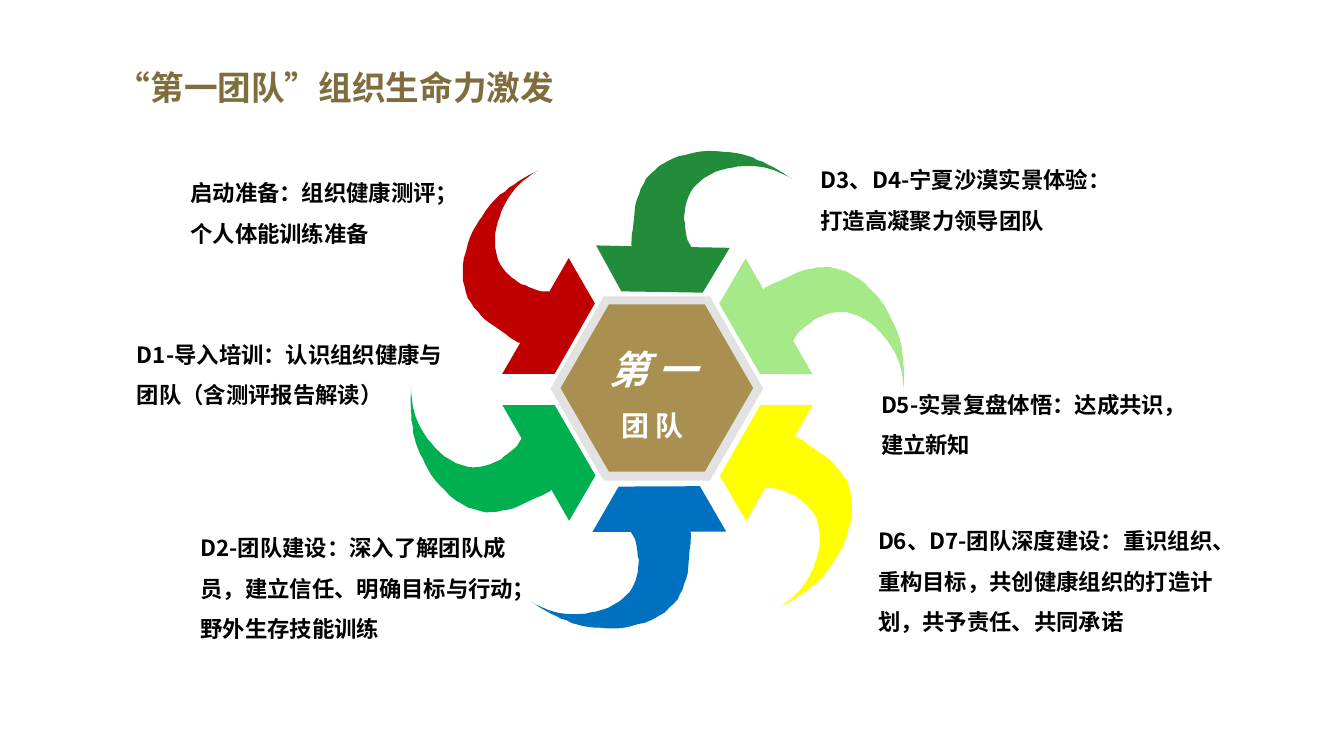
from dataclasses import dataclass

from lxml.etree import SubElement
from pptx import Presentation
from pptx.dml.color import RGBColor
from pptx.enum.shapes import MSO_SHAPE
from pptx.enum.text import MSO_ANCHOR, MSO_AUTO_SIZE, PP_ALIGN
from pptx.oxml.ns import qn
from pptx.util import Pt

PX = 9144  # EMU per px, 100 px to the inch
FONT = "Noto Sans CJK SC"
TITLE_ONLY = 5

BLACK = RGBColor(0x00, 0x00, 0x00)
WHITE = RGBColor(0xFF, 0xFF, 0xFF)
OCHRE = RGBColor(0x80, 0x6D, 0x3E)
GOLD = RGBColor(0xA9, 0x90, 0x51)
GREY = RGBColor(0xBF, 0xBF, 0xBF)
YELLOW = RGBColor(0xFF, 0xFF, 0x00)
LIME = RGBColor(0xA6, 0xE9, 0x89)
RED = RGBColor(0xC0, 0x00, 0x00)
GREEN = RGBColor(0x00, 0xB0, 0x50)
BLUE = RGBColor(0x00, 0x70, 0xC0)
FOREST = RGBColor(0x23, 0x8C, 0x3B)

# The head, the inner curve to the tip of the tail, then the outer curve back.
ARROW_OUTLINE = [
    (92, 0), (40, 0), (0, 70), (26, 115), (45, 82), (49, 82), (53, 82),
    (57, 83), (65, 86), (69, 88), (73, 89), (76, 91), (80, 94), (83, 96),
    (86, 99), (89, 102), (92, 106), (94, 109), (96, 113), (97, 117),
    (98, 121), (99, 126), (99, 130), (99, 134), (99, 139), (98, 144),
    (97, 148), (96, 152), (94, 157), (93, 161), (89, 169), (85, 176),
    (82, 180), (79, 184), (75, 188), (72, 191), (68, 194), (64, 197),
    (60, 200), (56, 202),
    (66, 197), (71, 194), (76, 191), (80, 188), (85, 185), (89, 181),
    (94, 178), (98, 174), (102, 170), (106, 165), (109, 161), (112, 156),
    (115, 152), (118, 147), (121, 142), (124, 135), (126, 129), (128, 121),
    (130, 115), (131, 107), (131, 100), (131, 93), (129, 86), (128, 81),
    (126, 75), (123, 71), (120, 66), (116, 62), (113, 58), (109, 54),
    (105, 51), (99, 47), (89, 40), (84, 36), (79, 33), (76, 31), (74, 31),
]


@dataclass
class Arrow:
    x: int
    y: int
    rotation: float
    color: RGBColor


@dataclass
class Label:
    x: int
    y: int
    w: int
    h: int
    text: str


@dataclass
class Hexagon:
    x: int
    y: int
    w: int
    h: int
    color: RGBColor
    opacity: int


ARROWS = [
    Arrow(714, 402, 0, YELLOW),
    Arrow(748, 229, 300.2, LIME),
    Arrow(459, 169, 180, RED),
    Arrow(425, 342, 120.2, GREEN),
    Arrow(554, 454, 60, BLUE),
    Arrow(627, 117, 241.2, FOREST),
]
HEXAGONS = [
    Hexagon(546, 294, 211, 183, GREY, 45),
    Hexagon(556, 302, 191, 166, GOLD, 100),
]
LABELS = [
    Label(179, 160, 304, 86, "启动准备：组织健康测评；\n个人体能训练准备"),
    Label(126, 320, 342, 98, "D1-导入培训：认识组织健康与团队（含测评报告解读）"),
    Label(189, 512, 342, 141,
          "D2-团队建设：深入了解团队成员，建立信任、明确目标与行动；野外生存技能训练"),
    Label(804, 147, 361, 86, "D3、D4-宁夏沙漠实景体验：\n打造高凝聚力领导团队"),
    Label(864, 370, 323, 98, "D5-实景复盘体悟：达成共识，建立新知"),
    Label(861, 505, 371, 117,
          "D6、D7-团队深度建设：重识组织、重构目标，共创健康组织的打造计划，共予责任、共同承诺"),
]


def format_runs(p, size: int, color: RGBColor, italic: bool = False) -> None:
    for r in p.runs:
        r.font.size = Pt(size)
        r.font.bold = True
        r.font.italic = italic
        r.font.color.rgb = color
        r.font.name = FONT
        SubElement(r.font._element, qn("a:ea"), typeface=FONT)


def paint(s, color: RGBColor, opacity: int = 100) -> None:
    """Give a shape a plain fill without line or shadow."""
    s.shadow.inherit = False
    s.line.fill.background()
    s.fill.solid()
    s.fill.fore_color.rgb = color
    if opacity < 100:
        tint = s._element.spPr.find(qn("a:solidFill"))[0]
        SubElement(tint, qn("a:alpha"), val=str(opacity * 1000))


def set_title(slide, text: str) -> None:
    s = slide.shapes.title
    s.left, s.top, s.width, s.height = (v * PX for v in (106, 61, 458, 50))
    tf = s.text_frame
    tf.text = text
    tf.word_wrap = False
    tf.auto_size = MSO_AUTO_SIZE.NONE
    tf.vertical_anchor = MSO_ANCHOR.TOP
    p = tf.paragraphs[0]
    p.alignment = PP_ALIGN.LEFT
    p.line_spacing = 1.0
    format_runs(p, 24, OCHRE)


def draw_arrow(slide, arrow: Arrow) -> None:
    builder = slide.shapes.build_freeform(*ARROW_OUTLINE[0], scale=PX)
    builder.add_line_segments(ARROW_OUTLINE[1:], close=True)
    s = builder.convert_to_shape(arrow.x * PX, arrow.y * PX)
    s.rotation = arrow.rotation
    paint(s, arrow.color)


def draw_hexagon(slide, hexagon: Hexagon) -> None:
    box = (v * PX for v in (hexagon.x, hexagon.y, hexagon.w, hexagon.h))
    s = slide.shapes.add_shape(MSO_SHAPE.HEXAGON, *box)
    s.adjustments[0] = 0.289
    paint(s, hexagon.color, hexagon.opacity)


def add_text(slide, label: Label):
    box = (v * PX for v in (label.x, label.y, label.w, label.h))
    tf = slide.shapes.add_textbox(*box).text_frame
    tf.word_wrap = True
    tf.auto_size = MSO_AUTO_SIZE.SHAPE_TO_FIT_TEXT
    tf.text = label.text
    return tf


def draw_label(slide, label: Label) -> None:
    for p in add_text(slide, label).paragraphs:
        p.line_spacing = 1.5
        format_runs(p, 16, BLACK)


def draw_center_name(slide) -> None:
    tf = add_text(slide, Label(559, 338, 177, 106, "第 一\n团 队"))
    first, team = tf.paragraphs
    first.alignment = team.alignment = PP_ALIGN.CENTER
    team.space_before = Pt(11)
    format_runs(first, 28, WHITE, italic=True)
    format_runs(team, 20, WHITE)


def main() -> None:
    prs = Presentation()
    prs.slide_width, prs.slide_height = 1333 * PX, 750 * PX
    slide = prs.slides.add_slide(prs.slide_layouts[TITLE_ONLY])
    set_title(slide, "“第一团队”组织生命力激发")
    for arrow in ARROWS:
        draw_arrow(slide, arrow)
    for hexagon in HEXAGONS:
        draw_hexagon(slide, hexagon)
    draw_center_name(slide)
    for label in LABELS:
        draw_label(slide, label)
    prs.save("out.pptx")


if __name__ == "__main__":
    main()
